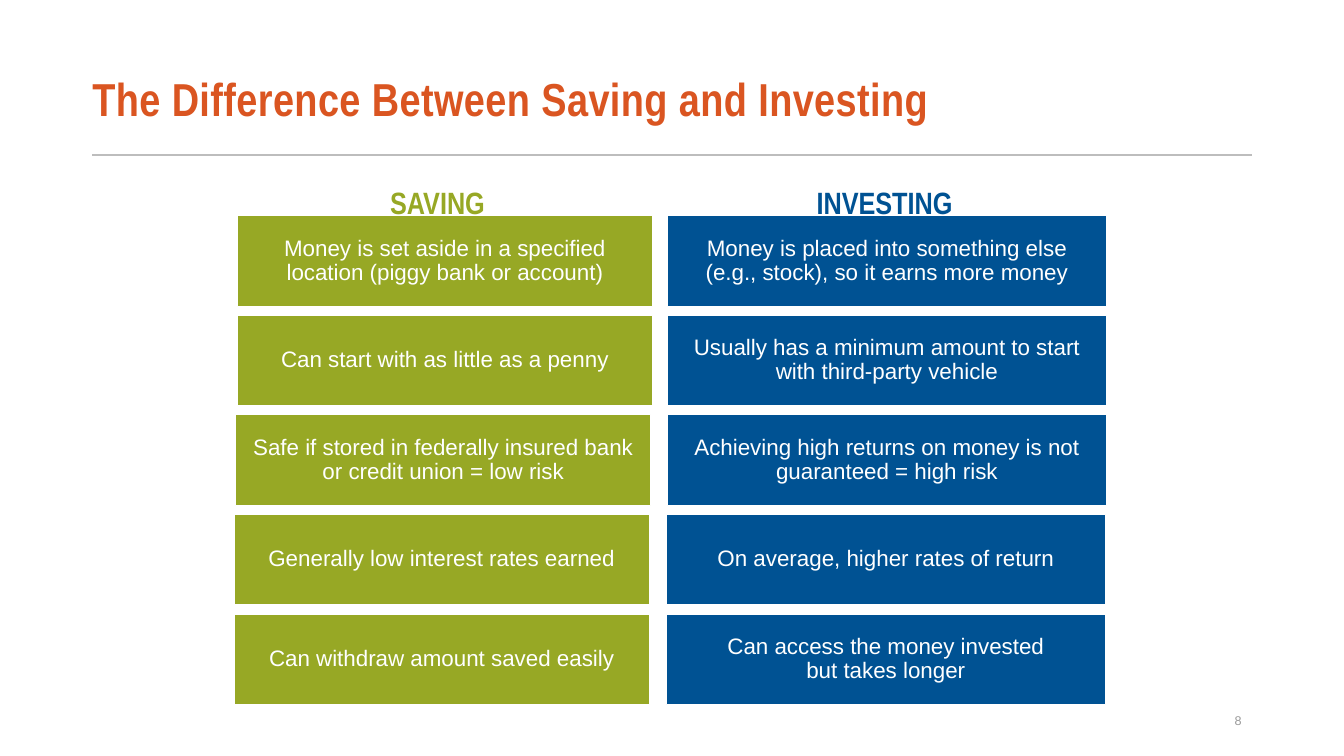
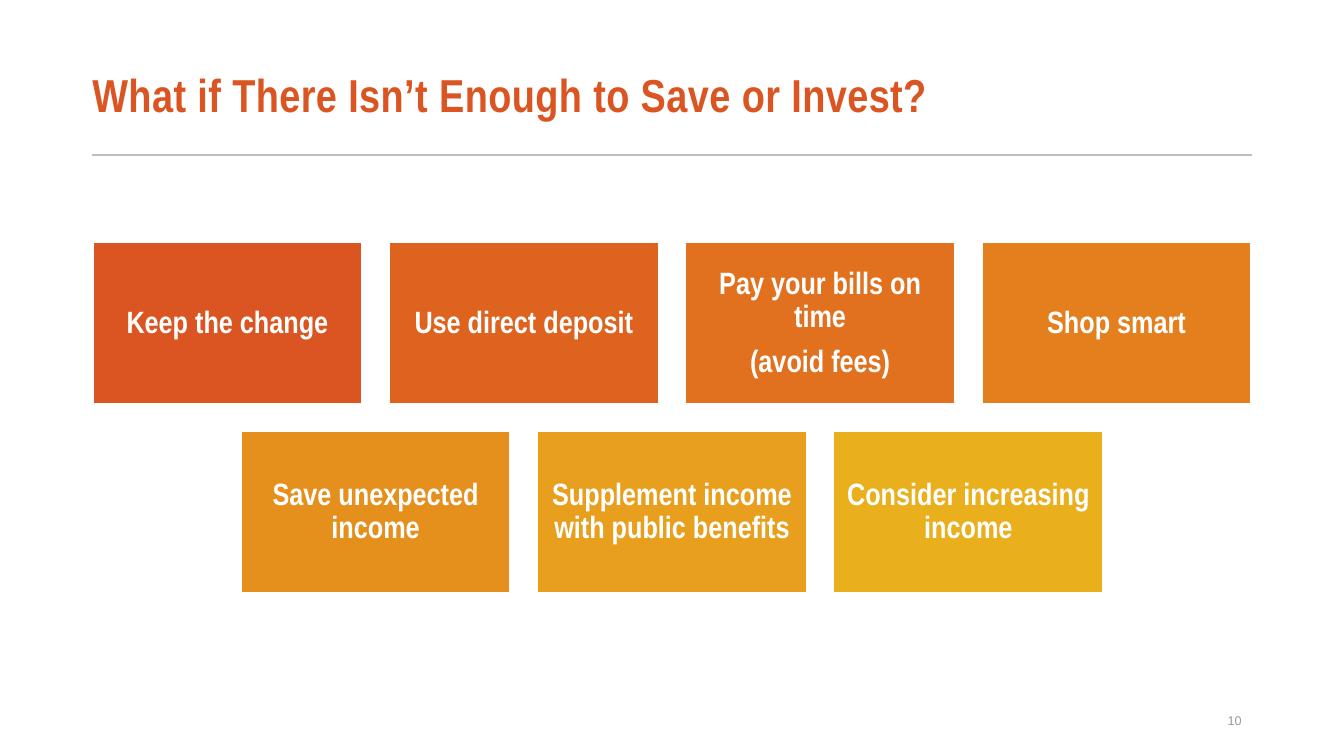
from dataclasses import dataclass
from typing import NamedTuple

from lxml.etree import SubElement
from pptx import Presentation
from pptx.dml.color import RGBColor
from pptx.enum.shapes import MSO_CONNECTOR as Link, MSO_SHAPE as Form
from pptx.enum.text import MSO_ANCHOR as Anchor, PP_ALIGN as Align
from pptx.oxml.ns import qn
from pptx.util import Pt

WIDE, HIGH = 960, 540
EDGE = 66
WHITE, GRAY = "FFFFFF", "BDBDBD"
ORANGE, GREEN, BLUE = "DA5521", "97A825", "005293"


class Box(NamedTuple):
    left: float
    top: float
    width: float
    height: float


@dataclass(frozen=True)
class Style:
    size: float
    face: str = "Arial"
    bold: bool = False
    align: Align = Align.CENTER
    anchor: Anchor = Anchor.MIDDLE
    lead: float = 1.0
    gap: float = 0
    pads: tuple = (7.2, 3.6, 7.2, 3.6)
    track: int = 0


@dataclass(frozen=True)
class Side:
    label: str
    shade: str
    head: Box
    width: float
    lefts: tuple
    lines: tuple


HEAD_PADS = (0, 3.6, 7.2, 3.6)
TITLE = Style(33, "Arial Narrow", True, Align.LEFT, lead=0.87, pads=HEAD_PADS, track=30)
LABEL = Style(22, "Arial Narrow", True, anchor=Anchor.TOP, lead=1.05, pads=HEAD_PADS)
FOLIO = Style(9, align=Align.RIGHT)
CELL = Style(16, lead=0.9, pads=(5, 5, 5, 5))
TILE = Style(22, "Arial Narrow", True, lead=0.9, gap=7.7, pads=(6.5, 6.5, 6.5, 6.5))

CELL_TOP, CELL_HIGH, CELL_STEP = 154.1, 64.8, 71.1
SIDES = (
    Side("SAVING", GREEN, Box(169.9, 126.7, 292.3, 28.8), 296.6,
         (169.5, 169.5, 168.3, 167.2, 167.2),
         ("Money is set aside in a specified location (piggy bank or account)",
          "Can start with as little as a penny",
          "Safe if stored in federally insured bank or credit union = low risk",
          "Generally low interest rates earned",
          "Can withdraw amount saved easily")),
    Side("INVESTING", BLUE, Box(480.2, 126.7, 310.3, 35.3), 313.6,
         (476.7, 476.7, 476.7, 475.9, 475.9),
         ("Money is placed into something else\v(e.g., stock), so it earns more money",
          "Usually has a minimum amount to start with third-party vehicle",
          "Achieving high returns on money is not guaranteed = high risk",
          "On average, higher rates of return",
          "Can access the money invested\vbut takes longer")),
)

TILE_WIDE, TILE_HIGH, TILE_GAP, TILE_TOP = 192.2, 115.3, 19.5, 173.4
TILES = (
    (("Keep the change", ORANGE),
     ("Use direct deposit", "DD631F"),
     ("Pay your bills on time\n(avoid fees)", "E1711E"),
     ("Shop smart", "E3801D")),
    (("Save unexpected income", "E58F1D"),
     ("Supplement income with public benefits", "E79F1D"),
     ("Consider increasing income", "E9AF1D")),
)


def paint(code: str) -> RGBColor:
    return RGBColor.from_string(code)


def place(box: Box) -> tuple:
    return tuple(Pt(size) for size in box)


def write(shape, text: str, style: Style, shade: str) -> None:
    frame = shape.text_frame
    frame.word_wrap = True
    frame.vertical_anchor = style.anchor
    (frame.margin_left, frame.margin_top,
     frame.margin_right, frame.margin_bottom) = (Pt(pad) for pad in style.pads)
    frame.text = text
    for place_no, para in enumerate(frame.paragraphs):
        para.alignment = style.align
        para.line_spacing = style.lead
        if place_no:
            para.space_before = Pt(style.gap)
        font = para.font
        font.name, font.size, font.bold = style.face, Pt(style.size), style.bold
        font.color.rgb = paint(shade)
        if style.track:
            for run in para.runs:
                run._r.get_or_add_rPr().set("spc", str(style.track))


def add_text(slide, box: Box, text: str, style: Style, shade: str) -> None:
    write(slide.shapes.add_textbox(*place(box)), text, style, shade)


def add_block(slide, box: Box, text: str, style: Style, fill: str) -> None:
    block = slide.shapes.add_shape(Form.RECTANGLE, *place(box))
    block.shadow.inherit = False
    block.fill.solid()
    block.fill.fore_color.rgb = paint(fill)
    block.line.color.rgb = paint(WHITE)
    block.line.width = Pt(1)
    write(block, text, style, WHITE)


def add_slide(deck, title: str, top: float, folio: str):
    slide = deck.slides.add_slide(deck.slide_layouts[6])
    rule = slide.shapes.add_connector(
        Link.STRAIGHT, Pt(EDGE), Pt(111), Pt(WIDE - EDGE), Pt(111))
    rule.line.color.rgb = paint(GRAY)
    rule.line.width = Pt(1.5)
    SubElement(rule._element.spPr, qn("a:effectLst"))
    add_text(slide, Box(EDGE, top, WIDE - 2 * EDGE, 68.4), title, TITLE, ORANGE)
    add_text(slide, Box(678, 500.4, 216, 28.8), folio, FOLIO, "9A9A9A")
    return slide


def draw_sides(deck) -> None:
    slide = add_slide(deck, "The Difference Between Saving and Investing", 38.9, "8")
    for side in SIDES:
        add_text(slide, side.head, side.label, LABEL, side.shade)
        for row, (left, line) in enumerate(zip(side.lefts, side.lines)):
            box = Box(left, CELL_TOP + row * CELL_STEP, side.width, CELL_HIGH)
            add_block(slide, box, line, CELL, side.shade)


def draw_tiles(deck) -> None:
    slide = add_slide(deck, "What if There Isn’t Enough to Save or Invest?", 36, "10")
    step = TILE_WIDE + TILE_GAP
    for row, tiles in enumerate(TILES):
        start = (WIDE - len(tiles) * step + TILE_GAP) / 2
        top = TILE_TOP + row * (TILE_HIGH + TILE_GAP)
        for col, (text, fill) in enumerate(tiles):
            box = Box(start + col * step, top, TILE_WIDE, TILE_HIGH)
            add_block(slide, box, text, TILE, fill)


def main() -> None:
    deck = Presentation()
    deck.slide_width, deck.slide_height = Pt(WIDE), Pt(HIGH)
    draw_sides(deck)
    draw_tiles(deck)
    deck.save("out.pptx")


if __name__ == "__main__":
    main()
